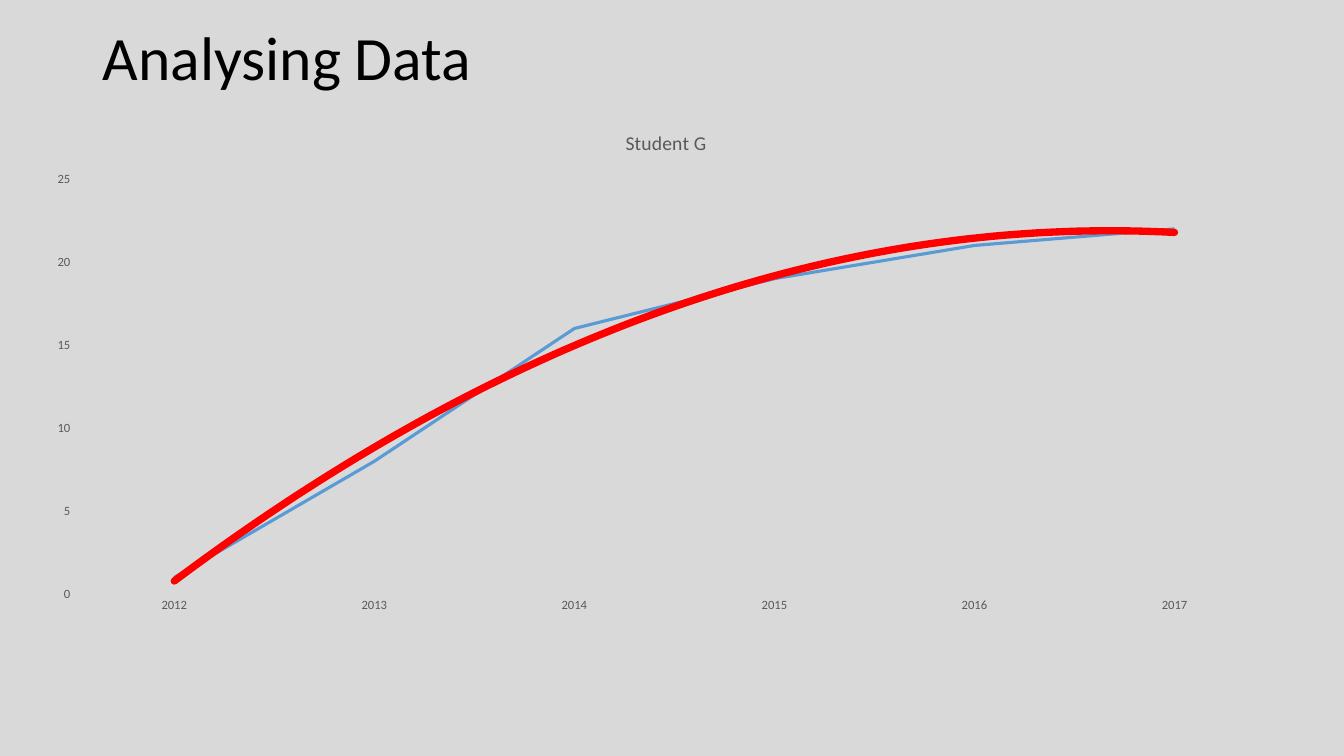
"""Build the Analysing Data slide with Student G's results and their trend."""
import pptx
import pptx.chart.data
import pptx.dml.color
import pptx.enum.chart
import pptx.enum.text
import pptx.oxml
import pptx.oxml.ns
import pptx.util
from pptx.util import Cm

FONT = "Calibri"
COLOURS = {
    "background": "D9D9D9",
    "heading": "000000",
    "label": "595959",
    "grid": "D9D9D9",
    "results": "5B9BD5",
    "trend": "FF0000",
}
RESULTS = {"2012": 1, "2013": 8, "2014": 16, "2015": 19, "2016": 21, "2017": 22}


def colour(name):
    """Return the named colour as an RGBColor."""
    return pptx.dml.color.RGBColor.from_string(COLOURS[name])


def set_font(font, size, name):
    """Set the typeface, size and colour of a font."""
    font.name = FONT
    font.size = pptx.util.Pt(size)
    font.bold = False
    font.color.rgb = colour(name)


def set_line(line, width, name):
    """Set the width and colour of a line."""
    line.width = pptx.util.Pt(width)
    line.color.rgb = colour(name)


def add_heading(slide, text):
    """Add the slide heading."""
    heading = slide.shapes.add_textbox(Cm(2.34), Cm(0.3), Cm(29.21), Cm(2.46))
    frame = heading.text_frame
    frame.word_wrap = True
    frame.vertical_anchor = pptx.enum.text.MSO_ANCHOR.MIDDLE
    paragraph = frame.paragraphs[0]
    paragraph.text = text
    paragraph.line_spacing = 0.9
    set_font(paragraph.font, 44, "heading")


def add_trend(series, width, name):
    """Add a second-order polynomial trend line to a series."""
    trend = pptx.oxml.parse_xml(
        f'<c:trendline {pptx.oxml.ns.nsdecls("c", "a")}>'
        f'<c:spPr><a:ln w="{pptx.util.Pt(width)}" cap="rnd"><a:solidFill>'
        f'<a:srgbClr val="{COLOURS[name]}"/></a:solidFill></a:ln></c:spPr>'
        '<c:trendlineType val="poly"/><c:order val="2"/>'
        '<c:dispRSqr val="0"/><c:dispEq val="0"/></c:trendline>'
    )
    series._element.find(pptx.oxml.ns.qn("c:cat")).addprevious(trend)


def style_axis(axis):
    """Give an axis small labels and no tick marks."""
    axis.major_tick_mark = pptx.enum.chart.XL_TICK_MARK.NONE
    axis.minor_tick_mark = pptx.enum.chart.XL_TICK_MARK.NONE
    set_font(axis.tick_labels.font, 9, "label")


def add_results_chart(slide, student, results):
    """Add the line chart of one student's yearly results."""
    data = pptx.chart.data.CategoryChartData()
    data.categories = list(results)
    data.add_series(student, list(results.values()))
    chart = slide.shapes.add_chart(
        pptx.enum.chart.XL_CHART_TYPE.LINE,
        Cm(0.81), Cm(2.77), Cm(31.95), Cm(12.93), data,
    ).chart
    set_font(chart.font, 10, "heading")
    chart.has_legend = False
    chart.has_title = True
    title = chart.chart_title.text_frame.paragraphs[0]
    title.text = student
    set_font(title.font, 14, "label")
    chart.chart_title.include_in_layout = False

    years, marks = chart.category_axis, chart.value_axis
    for axis in (years, marks):
        style_axis(axis)
    set_line(years.format.line, 0.75, "grid")
    marks.format.line.fill.background()
    marks.has_major_gridlines = True
    set_line(marks.major_gridlines.format.line, 0.75, "grid")
    marks.minimum_scale, marks.maximum_scale, marks.major_unit = 0, 25, 5

    chart.plots[0].vary_by_categories = False
    series = chart.plots[0].series[0]
    series.smooth = False
    series.marker.style = pptx.enum.chart.XL_MARKER_STYLE.NONE
    set_line(series.format.line, 2.25, "results")
    add_trend(series, 5.25, "trend")


def main():
    """Build and save the slide."""
    deck = pptx.Presentation()
    deck.slide_width, deck.slide_height = Cm(33.87), Cm(19.05)
    slide = deck.slides.add_slide(deck.slide_layouts[6])
    slide.background.fill.solid()
    slide.background.fill.fore_color.rgb = colour("background")
    add_heading(slide, "Analysing Data")
    add_results_chart(slide, "Student G", RESULTS)
    deck.save("out.pptx")


if __name__ == "__main__":
    main()
